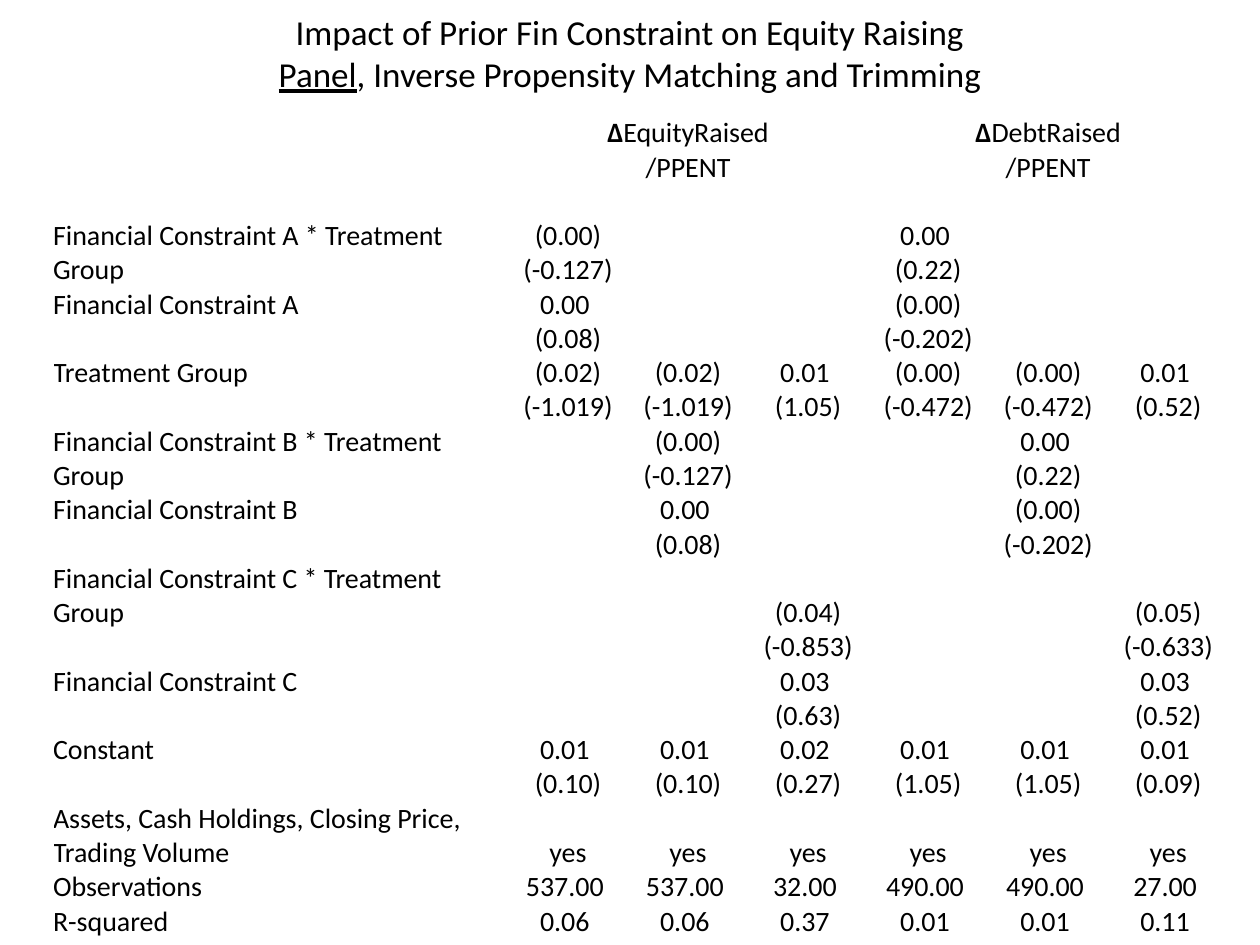
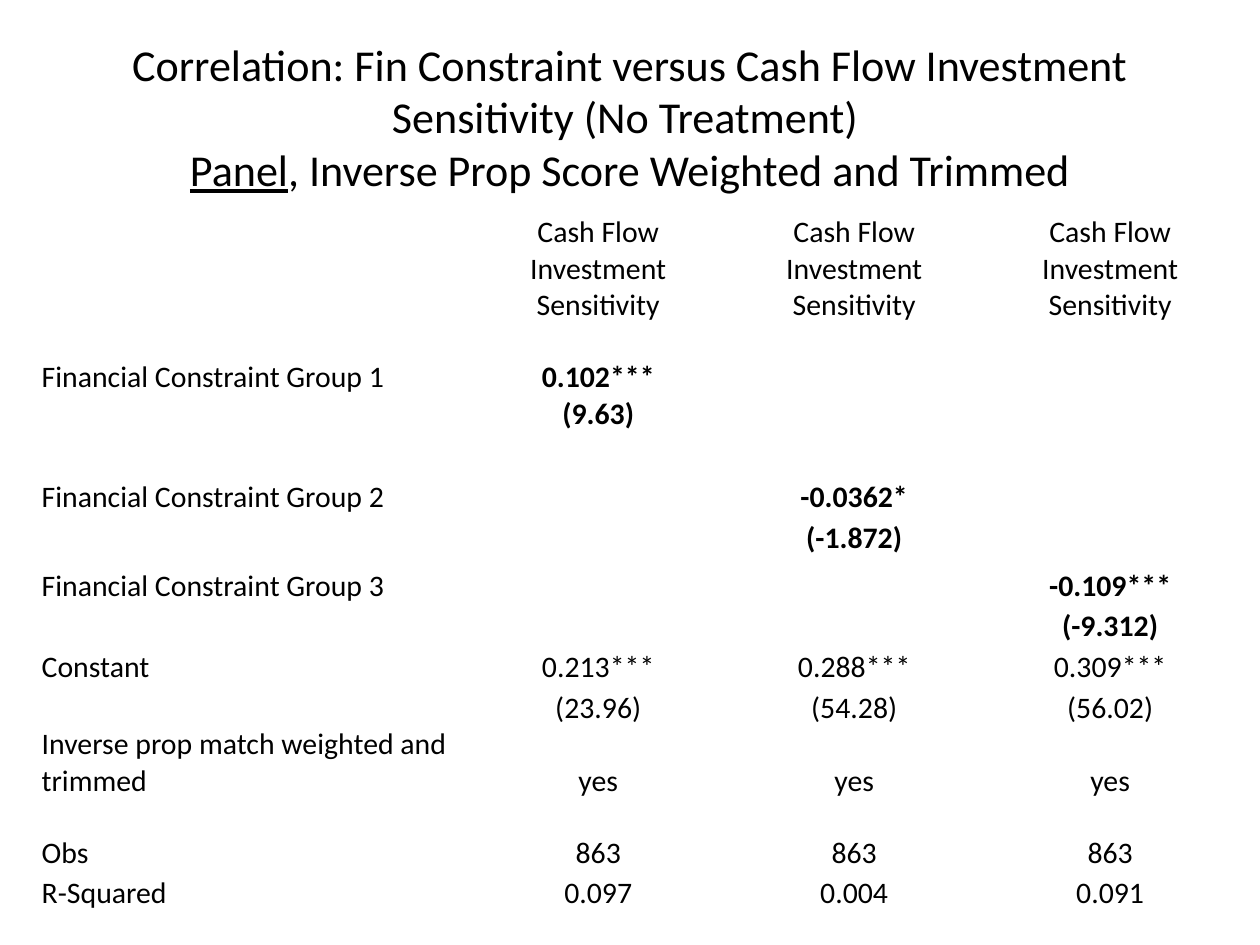
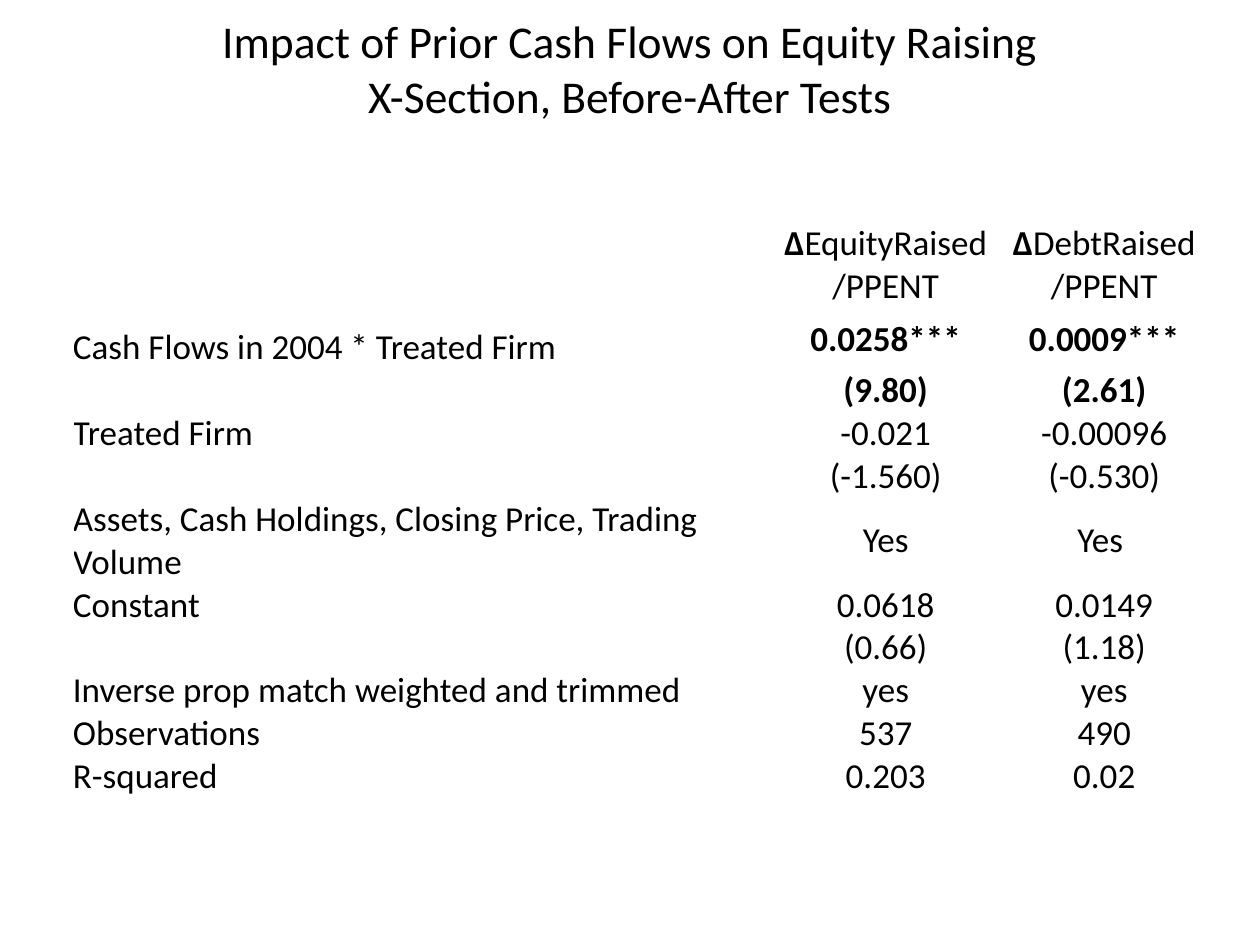
from lxml.etree import SubElement
from pptx import Presentation
from pptx.dml.color import RGBColor
from pptx.enum.text import MSO_ANCHOR, MSO_AUTO_SIZE, PP_ALIGN
from pptx.oxml.ns import qn
from pptx.util import Cm, Pt

BLACK = RGBColor(0x00, 0x00, 0x00)
FONT = "Calibri"
UNDERLINED = "Panel"
BOLD_SYMBOL = "Δ"
TITLE_LEFT, TITLE_WIDTH = 1.27, 22.86
EQUITY = "ΔEquityRaised\n/PPENT"
DEBT = "ΔDebtRaised\n/PPENT"
SENSITIVITY = "Cash Flow Investment Sensitivity"

EQUITY_ROWS = [
    ("", EQUITY, "", "", DEBT, "", ""),
    ("",) * 7,
    ("Financial Constraint A * Treatment Group", "(0.00)", "", "", "0.00 ", "", ""),
    ("", "(-0.127)", "", "", "(0.22)", "", ""),
    ("Financial Constraint A", "0.00 ", "", "", "(0.00)", "", ""),
    ("", "(0.08)", "", "", "(-0.202)", "", ""),
    ("Treatment Group", "(0.02)", "(0.02)", "0.01 ", "(0.00)", "(0.00)", "0.01 "),
    ("", "(-1.019)", "(-1.019)", "(1.05)", "(-0.472)", "(-0.472)", "(0.52)"),
    ("Financial Constraint B * Treatment Group", "", "(0.00)", "", "", "0.00 ", ""),
    ("", "", "(-0.127)", "", "", "(0.22)", ""),
    ("Financial Constraint B", "", "0.00 ", "", "", "(0.00)", ""),
    ("", "", "(0.08)", "", "", "(-0.202)", ""),
    ("Financial Constraint C * Treatment Group", "", "", "(0.04)", "", "", "(0.05)"),
    ("", "", "", "(-0.853)", "", "", "(-0.633)"),
    ("Financial Constraint C", "", "", "0.03 ", "", "", "0.03 "),
    ("", "", "", "(0.63)", "", "", "(0.52)"),
    ("Constant", "0.01 ", "0.01 ", "0.02 ", "0.01 ", "0.01 ", "0.01 "),
    ("", "(0.10)", "(0.10)", "(0.27)", "(1.05)", "(1.05)", "(0.09)"),
    ("Assets, Cash Holdings, Closing Price, Trading Volume",) + ("yes",) * 6,
    ("Observations", "537.00 ", "537.00 ", "32.00 ", "490.00 ", "490.00 ", "27.00 "),
    ("R-squared", "0.06 ", "0.06 ", "0.37 ", "0.01 ", "0.01 ", "0.11 "),
]

CORRELATION_ROWS = [
    ("", SENSITIVITY, SENSITIVITY, SENSITIVITY),
    ("Financial Constraint Group 1", "0.102***", "", ""),
    ("", "(9.63)", "", ""),
    ("Financial Constraint Group 2", "", "-0.0362*", ""),
    ("", "", "(-1.872)", ""),
    ("Financial Constraint Group 3", "", "", "-0.109***"),
    ("", "", "", "(-9.312)"),
    ("Constant", "0.213***", "0.288***", "0.309***"),
    ("", "(23.96)", "(54.28)", "(56.02)"),
    ("Inverse prop match weighted and trimmed", "yes", "yes", "yes"),
    ("Obs", "863", "863", "863"),
    ("R-Squared", "0.097", "0.004", "0.091"),
]

CASH_FLOW_ROWS = [
    ("", EQUITY, DEBT),
    ("Cash Flows in 2004 * Treated Firm", "0.0258***", "0.0009***"),
    ("", "(9.80)", "(2.61)"),
    ("Treated Firm", "-0.021", "-0.00096"),
    ("", "(-1.560)", "(-0.530)"),
    ("Assets, Cash Holdings, Closing Price, Trading Volume", "Yes", "Yes "),
    ("Constant", "0.0618", "0.0149"),
    ("", "(0.66)", "(1.18)"),
    ("Inverse prop match weighted and trimmed", "yes", "yes"),
    ("Observations", "537", "490"),
    ("R-squared", "0.203", "0.02"),
]

SLIDES = [
    {
        "title": {
            "lines": ["Impact of Prior Fin Constraint on Equity Raising",
                      "Panel, Inverse Propensity Matching and Trimming"],
            "top": 0, "height": 2.11, "size": 20,
        },
        "results": {
            "rows": EQUITY_ROWS, "left": 1.07, "top": 2.34, "size": 16,
            "widths": [9.17] + [2.42] * 6,
            "heights": [1.38 if row in (0, 12, 18) else 0.69 for row in range(21)],
            "merges": [(0, 1, 0, 3), (0, 4, 0, 6), (2, 0, 3, 0), (8, 0, 9, 0)],
        },
    },
    {
        "title": {
            "lines": ["Correlation: Fin Constraint versus Cash Flow Investment "
                      "Sensitivity (No Treatment) ",
                      "Panel, Inverse Prop Score Weighted and Trimmed"],
            "top": 0.76, "height": 3.17, "size": 25.2,
        },
        "results": {
            "rows": CORRELATION_ROWS, "left": 0.84, "top": 4.32, "size": 17,
            "widths": [8.64] + [5.16] * 3,
            "heights": [2.2, 1.45, 0.74, 1.69, 0.82, 0.96,
                        0.82, 0.82, 0.82, 1.47, 1.45, 0.82],
            "bold_rows": range(1, 7),
        },
    },
    {
        "title": {
            "lines": ["Impact of Prior Cash Flows on Equity Raising",
                      "X-Section, Before-After Tests"],
            "top": 0, "height": 2.74, "size": 26,
        },
        "results": {
            "rows": CASH_FLOW_ROWS, "left": 1.47, "top": 4.45, "size": 20,
            "widths": [14.05, 4.67, 4.14],
            "heights": [1.8, 1.19] + [0.86] * 3 + [1.73] + [0.86] * 5,
            "bold_rows": range(1, 3),
            "value_anchor": MSO_ANCHOR.MIDDLE,
        },
    },
]


def set_all(target, values):
    for name, value in values.items():
        setattr(target, name, value)


def add_text(paragraph, text, size, **emphasis):
    run = paragraph.add_run()
    run.text = text
    set_all(run.font, {"name": FONT, "size": Pt(size), "bold": False, **emphasis})
    run.font.color.rgb = BLACK


def add_marked_text(paragraph, text, marked, size, **emphasis):
    if text.startswith(marked):
        add_text(paragraph, marked, size, **emphasis)
        text = text.removeprefix(marked)
    add_text(paragraph, text, size)


def place_title(heading, lines, top, height, size):
    set_all(heading, {"left": Cm(TITLE_LEFT), "top": Cm(top),
                      "width": Cm(TITLE_WIDTH), "height": Cm(height)})
    set_all(heading.text_frame, {"word_wrap": True, "auto_size": MSO_AUTO_SIZE.NONE,
                                 "vertical_anchor": MSO_ANCHOR.MIDDLE})
    paragraph = heading.text_frame.paragraphs[0]
    paragraph.alignment = PP_ALIGN.CENTER
    for number, line in enumerate(lines):
        if number:
            line_break = paragraph._p.add_br()
            SubElement(line_break, qn("a:rPr"), sz=str(round(size * 100)))
        add_marked_text(paragraph, line, UNDERLINED, size, underline=True)


def fill_cell(cell, text, size, bold, alignment, anchor):
    set_all(cell, {"margin_left": 0, "margin_right": 0, "margin_top": 0,
                   "margin_bottom": 0, "vertical_anchor": anchor})
    cell.fill.background()
    frame = cell.text_frame
    for number, line in enumerate(text.split("\n")):
        paragraph = frame.add_paragraph() if number else frame.paragraphs[0]
        paragraph.alignment = alignment
        if not line:
            paragraph._p.get_or_add_endParaRPr().set("sz", str(size * 100))
        elif bold:
            add_text(paragraph, line, size, bold=True)
        else:
            add_marked_text(paragraph, line, BOLD_SYMBOL, size, bold=True)


def add_results(slide, rows, left, top, size, widths, heights, merges=(),
                bold_rows=(), value_anchor=MSO_ANCHOR.BOTTOM):
    results = slide.shapes.add_table(
        len(rows), len(widths), Cm(left), Cm(top),
        Cm(sum(widths)), Cm(sum(heights))).table
    set_all(results, {"first_row": False, "horz_banding": False})
    for column, width in zip(results.columns, widths):
        column.width = Cm(width)
    for row, height in zip(results.rows, heights):
        row.height = Cm(height)
    for first_row, first_column, last_row, last_column in merges:
        results.cell(first_row, first_column).merge(results.cell(last_row, last_column))
    for row_number, (label, *values) in enumerate(rows):
        fill_cell(results.cell(row_number, 0), label, size, False,
                  PP_ALIGN.LEFT, MSO_ANCHOR.BOTTOM)
        for column_number, value in enumerate(values, 1):
            fill_cell(results.cell(row_number, column_number), value, size,
                      row_number in bold_rows, PP_ALIGN.CENTER, value_anchor)


def main():
    deck = Presentation()
    set_all(deck, {"slide_width": Cm(25.4), "slide_height": Cm(19.05)})
    title_only = deck.slide_layouts[5]
    for content in SLIDES:
        slide = deck.slides.add_slide(title_only)
        place_title(slide.shapes.title, **content["title"])
        add_results(slide, **content["results"])
    deck.save("out.pptx")


if __name__ == "__main__":
    main()
